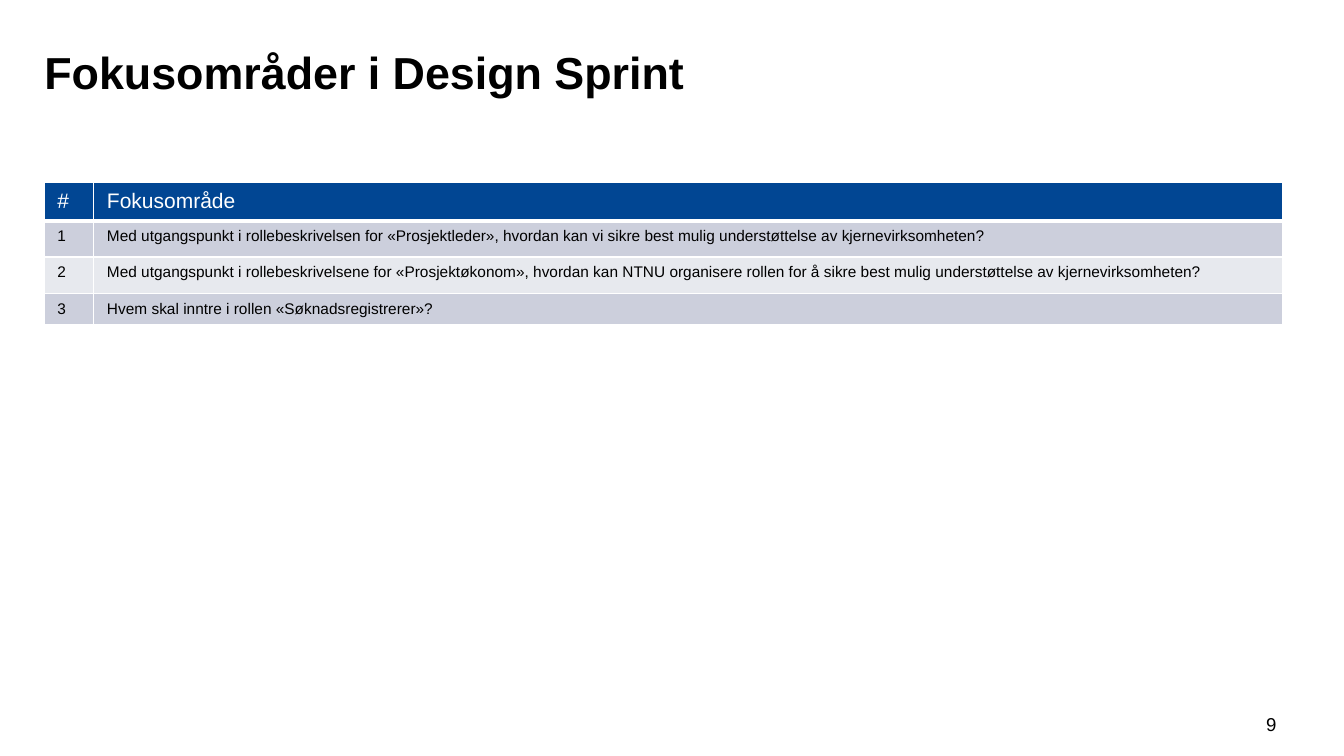
import pptx
import pptx.dml.color
import pptx.enum.text
import pptx.oxml
import pptx.oxml.ns
import pptx.util

SLIDE_WIDTH, SLIDE_HEIGHT = 13.33, 7.5
COLUMN_SHARES = [0.04, 0.96]
ROW_HEIGHTS = [0.38, 0.36, 0.36, 0.31]
FOCUS_AREAS = [
    "Med utgangspunkt i rollebeskrivelsen for «Prosjektleder», hvordan kan vi sikre "
    "best mulig understøttelse av kjernevirksomheten?",
    "Med utgangspunkt i rollebeskrivelsene for «Prosjektøkonom», hvordan kan NTNU "
    "organisere rollen for å sikre best mulig understøttelse av kjernevirksomheten?",
    "Hvem skal inntre i rollen «Søknadsregistrerer»?",
]


def color(hex_code):
    return pptx.dml.color.RGBColor.from_string(hex_code)


def write(frame, text, size, ink="000000", bold=False, align="LEFT",
          anchor="TOP", margins=(0, 0)):
    """Fill a text frame or a table cell; margins are horizontal and vertical inches."""
    frame.margin_left = frame.margin_right = pptx.util.Inches(margins[0])
    frame.margin_top = frame.margin_bottom = pptx.util.Inches(margins[1])
    frame.vertical_anchor = getattr(pptx.enum.text.MSO_ANCHOR, anchor)
    body = getattr(frame, "text_frame", frame)
    body.word_wrap = True
    paragraph = body.paragraphs[0]
    paragraph.alignment = getattr(pptx.enum.text.PP_ALIGN, align)
    run = paragraph.add_run()
    run.text = text
    run.font.name = "Arial"
    run.font.size = pptx.util.Pt(size)
    run.font.bold = bold
    run.font.color.rgb = color(ink)


class FocusSlide:
    header_fill = "014693"
    band_fills = ["CCCFDC", "E7E9EE"]
    border = "FFFFFF"
    cell_margins = (0.13, 0.07)

    def __init__(self, deck):
        self.deck = deck
        self.slide = deck.slides.add_slide(deck.slide_layouts[5])

    def area(self, left, top, width, height):
        """Turn shares of the slide's size into lengths."""
        across, down = self.deck.slide_width, self.deck.slide_height
        return (round(left * across), round(top * down),
                round(width * across), round(height * down))

    def title(self, text, *shares):
        heading = self.slide.shapes.title
        heading.left, heading.top, heading.width, heading.height = self.area(*shares)
        write(heading.text_frame, text, 32, bold=True, anchor="MIDDLE")

    def page_number(self, number, *shares):
        box = self.slide.shapes.add_textbox(*self.area(*shares))
        write(box.text_frame, number, 13.3, align="CENTER", margins=(0.1, 0.05))

    def cell_borders(self, cell, bottom_width):
        properties = cell._tc.get_or_add_tcPr()
        widths = {"lnL": 1, "lnR": 1, "lnT": 1, "lnB": bottom_width}
        for position, (side, width) in enumerate(widths.items()):
            properties.insert(position, pptx.oxml.parse_xml(
                f'<a:{side} {pptx.oxml.ns.nsdecls("a")} w="{pptx.util.Pt(width)}">'
                f'<a:solidFill><a:srgbClr val="{self.border}"/></a:solidFill></a:{side}>'))

    def table(self, rows, *shares):
        bounds = self.area(*shares)
        grid = self.slide.shapes.add_table(len(rows), len(rows[0]), *bounds).table
        for column, share in zip(grid.columns, COLUMN_SHARES):
            column.width = round(bounds[2] * share)
        for index, (row, height) in enumerate(zip(grid.rows, ROW_HEIGHTS)):
            row.height = pptx.util.Inches(height)
            header = index == 0
            fill = self.header_fill if header else self.band_fills[(index - 1) % 2]
            for cell, text in zip(row.cells, rows[index]):
                cell.fill.solid()
                cell.fill.fore_color.rgb = color(fill)
                self.cell_borders(cell, 3 if header else 1)
                write(cell, text, 15 if header else 11,
                      ink="FFFFFF" if header else "000000", margins=self.cell_margins)


def main():
    deck = pptx.Presentation()
    deck.slide_width = pptx.util.Inches(SLIDE_WIDTH)
    deck.slide_height = pptx.util.Inches(SLIDE_HEIGHT)
    focus = FocusSlide(deck)
    left, width = 0.44 / SLIDE_WIDTH, 12.28 / SLIDE_WIDTH

    # Title
    focus.title("Fokusområder i Design Sprint",
                left, 0.44 / SLIDE_HEIGHT, width, 0.54 / SLIDE_HEIGHT)

    # Numbered focus areas
    rows = [("#", "Fokusområde")]
    rows += [(str(number), text) for number, text in enumerate(FOCUS_AREAS, 1)]
    focus.table(rows, left, 1.81 / SLIDE_HEIGHT, width, sum(ROW_HEIGHTS) / SLIDE_HEIGHT)

    # Page number
    focus.page_number("9", 12.36 / SLIDE_WIDTH, 7.02 / SLIDE_HEIGHT,
                      0.5 / SLIDE_WIDTH, 0.4 / SLIDE_HEIGHT)

    deck.save("out.pptx")


if __name__ == "__main__":
    main()
